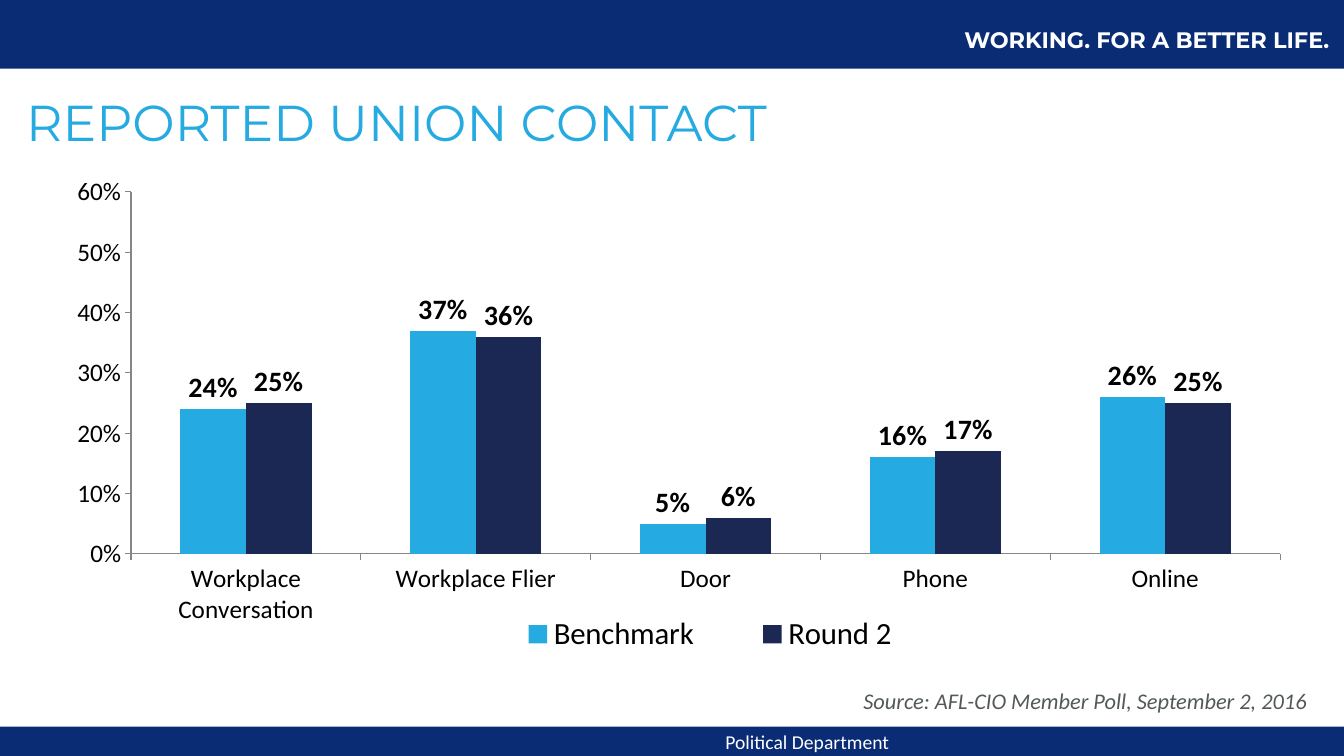
import dataclasses

import lxml.etree
import pptx
import pptx.chart.data
import pptx.dml.color
import pptx.enum.chart
import pptx.enum.shapes
import pptx.enum.text
import pptx.oxml.ns
import pptx.util

Cm = pptx.util.Cm
ALIGN = pptx.enum.text.PP_ALIGN
ANCHOR = pptx.enum.text.MSO_ANCHOR


@dataclasses.dataclass(frozen=True)
class Theme:
    """Colours, fonts and type sizes of the slide."""
    navy: str = "092C74"
    sky: str = "25AAE1"
    midnight: str = "1A2853"
    white: str = "FFFFFF"
    black: str = "000000"
    grey: str = "535959"
    axis: str = "868686"
    head: str = "Montserrat"
    body: str = "Calibri"
    title: int = 36
    legend: int = 22
    label: int = 20
    tick: int = 18
    note: int = 16
    footer: int = 14


class Deck:
    """Draws styled elements on the current slide."""

    def __init__(self, prs, theme):
        self.theme = theme
        self.s = prs.slides.add_slide(prs.slide_layouts[6])

    def color(self, value):
        return pptx.dml.color.RGBColor.from_string(value)

    def style(self, font, size, color, name=None, **extra):
        font.color.rgb = self.color(color)
        values = {"size": pptx.util.Pt(size), "name": name or self.theme.body, **extra}
        for key, value in values.items():
            setattr(font, key, value)

    def band(self, top, height):
        sp = self.s.shapes.add_shape(pptx.enum.shapes.MSO_SHAPE.RECTANGLE,
                                     0, Cm(top), Cm(33.87), Cm(height))
        sp.shadow.inherit = False
        sp.fill.solid()
        sp.fill.fore_color.rgb = self.color(self.theme.navy)
        sp.line.fill.background()

    def text(self, box, words, align=ALIGN.LEFT, anchor=ANCHOR.TOP, spacing=1.0, **font):
        tf = self.s.shapes.add_textbox(*map(Cm, box)).text_frame
        tf.word_wrap = True
        tf.vertical_anchor = anchor
        p = tf.paragraphs[0]
        p.alignment, p.line_spacing = align, spacing
        r = p.add_run()
        r.text = words
        self.style(r.font, **font)

    def place(self, parent, index, box, inner=False):
        """Give a chart part a manual layout in fractions of the chart."""
        qn = pptx.oxml.ns.qn
        for old in parent.findall(qn("c:layout")):
            parent.remove(old)
        layout = lxml.etree.Element(qn("c:layout"))
        parent.insert(index, layout)
        manual = lxml.etree.SubElement(layout, qn("c:manualLayout"))
        values = {"layoutTarget": "inner"} if inner else {}
        values.update(xMode="edge", yMode="edge", **dict(zip("xywh", map(str, box))))
        for key, value in values.items():
            lxml.etree.SubElement(manual, qn("c:" + key)).set("val", value)

    def axis(self, axis):
        values = {"has_major_gridlines": False,
                  "major_tick_mark": pptx.enum.chart.XL_TICK_MARK.OUTSIDE,
                  "minor_tick_mark": pptx.enum.chart.XL_TICK_MARK.NONE}
        for key, value in values.items():
            setattr(axis, key, value)
        axis.format.line.color.rgb = self.color(self.theme.axis)
        axis.format.line.width = pptx.util.Pt(0.75)
        self.style(axis.tick_labels.font, self.theme.tick, self.theme.black)

    def columns(self, box, cats, series, top, step):
        t = self.theme
        data = pptx.chart.data.CategoryChartData(number_format="0%")
        data.categories = cats
        for name, vals, _ in series:
            data.add_series(name, vals)
        chart = self.s.shapes.add_chart(
            pptx.enum.chart.XL_CHART_TYPE.COLUMN_CLUSTERED, *map(Cm, box), data).chart
        self.style(chart.font, t.tick, t.black)
        chart.has_title = False
        for axis in (chart.category_axis, chart.value_axis):
            self.axis(axis)
        values = {"minimum_scale": 0, "maximum_scale": top, "major_unit": step}
        for key, value in values.items():
            setattr(chart.value_axis, key, value)
        ticks = chart.value_axis.tick_labels
        ticks.number_format, ticks.number_format_is_linked = "0%", False

        plot = chart.plots[0]
        plot.gap_width, plot.overlap, plot.vary_by_categories = 150, 0, False
        for ser, (_, _, fill) in zip(plot.series, series):
            ser.format.fill.solid()
            ser.format.fill.fore_color.rgb = self.color(fill)
            labels = ser.data_labels
            values = {"show_value": True, "number_format": "0%",
                      "number_format_is_linked": False,
                      "position": pptx.enum.chart.XL_LABEL_POSITION.OUTSIDE_END}
            for key, value in values.items():
                setattr(labels, key, value)
            self.style(labels.font, t.label, t.black, bold=True)

        chart.has_legend = True
        legend = chart.legend
        legend.position = pptx.enum.chart.XL_LEGEND_POSITION.BOTTOM
        legend.include_in_layout = False
        self.style(legend.font, t.legend, t.black)
        self.place(legend._element, 1, (0.34, 0.89, 0.38, 0.11))
        self.place(chart._chartSpace.chart.plotArea, 0, (0.073, 0.038, 0.907, 0.742), True)


def main():
    prs = pptx.Presentation()
    prs.slide_width, prs.slide_height = Cm(33.87), Cm(19.05)
    t = Theme()
    deck = Deck(prs, t)
    deck.band(18.31, 0.74)
    deck.band(0, 1.73)
    deck.text((21.87, 0.53, 14.07, 0.94), "WORKING. FOR A BETTER LIFE.", ALIGN.CENTER,
              size=t.note, color=t.white, name=t.head, bold=True)
    deck.text((0.41, 1.93, 29.34, 2.44), "REPORTED UNION CONTACT", anchor=ANCHOR.MIDDLE,
              spacing=0.9, size=t.title, color=t.sky, name=t.head)
    deck.text((11.23, 18.49, 11.43, 0.38), "Political Department", ALIGN.RIGHT,
              ANCHOR.MIDDLE, size=t.footer, color=t.white)
    deck.columns((0.97, 4.37, 31.93, 12.29),
                 ["Workplace Conversation", "Workplace Flier", "Door", "Phone", "Online"],
                 [("Benchmark", (0.24, 0.37, 0.05, 0.16, 0.26), t.sky),
                  ("Round 2", (0.25, 0.36, 0.06, 0.17, 0.25), t.midnight)],
                 top=0.6, step=0.1)
    deck.text((21.51, 17.2, 12.34, 0.94), "Source: AFL-CIO Member Poll, September 2, 2016",
              size=t.note, color=t.grey, italic=True)
    prs.save("out.pptx")


if __name__ == "__main__":
    main()
